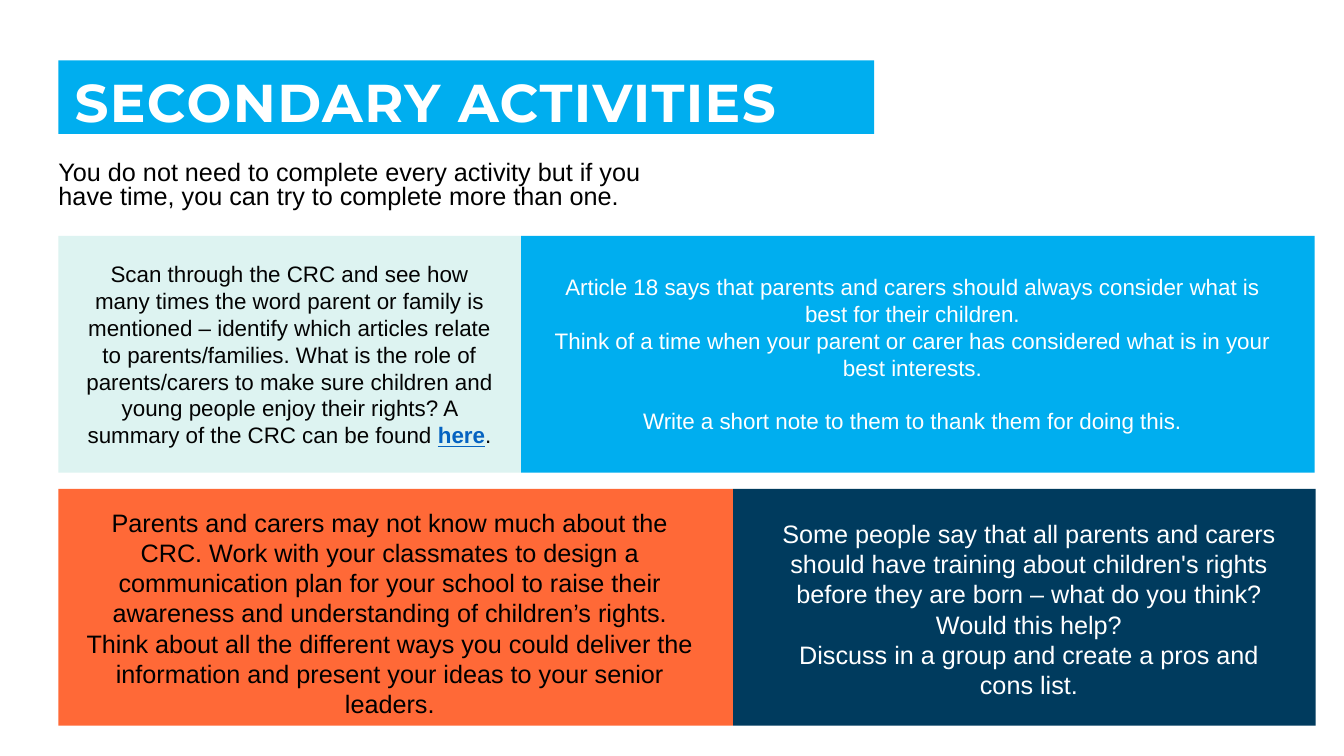
import pptx
import pptx.dml.color
import pptx.enum.shapes
import pptx.enum.text
import pptx.util
from dataclasses import dataclass

Pt = pptx.util.Pt
Inches = pptx.util.Inches
ANCHOR = pptx.enum.text.MSO_ANCHOR
ALIGN = pptx.enum.text.PP_ALIGN


@dataclass(frozen=True)
class Theme:
    sky: str = "00AEEF"
    mint: str = "DDF3F1"
    orange: str = "FF6937"
    navy: str = "003B5E"
    white: str = "FFFFFF"
    black: str = "000000"
    ink: str = "030303"
    link: str = "0563C1"
    heading_font: str = "Montserrat"
    body_font: str = "Arial"
    title: int = 38
    large: int = 18
    small: int = 16


class Deck:
    def __init__(self, theme):
        self.theme = theme
        self.prs = pptx.Presentation()
        self.prs.slide_width = Inches(13.33)
        self.prs.slide_height = Inches(7.5)
        self.s = self.prs.slides.add_slide(self.prs.slide_layouts[6])

    def place(self, left, top, width, height):
        w, h = self.prs.slide_width, self.prs.slide_height
        shares = zip((left, top, width, height), (w, h, w, h))
        return [round(share * side / 100) for share, side in shares]

    def style(self, r, size, color, font=None, bold=False):
        r.font.name = font or self.theme.body_font
        r.font.size = Pt(size)
        r.font.bold = bold
        r.font.color.rgb = pptx.dml.color.RGBColor.from_string(color)

    def panel(self, box, color):
        sp = self.s.shapes.add_shape(
            pptx.enum.shapes.MSO_SHAPE.RECTANGLE, *self.place(*box))
        sp.shadow.inherit = False
        sp.fill.solid()
        sp.fill.fore_color.rgb = pptx.dml.color.RGBColor.from_string(color)
        sp.line.fill.background()
        return sp

    def banner(self, box, text):
        tf = self.panel(box, self.theme.sky).text_frame
        tf.margin_left = tf.margin_top = Inches(0.16)
        tf.margin_right, tf.margin_bottom = Inches(0.12), 0
        tf.vertical_anchor = ANCHOR.MIDDLE
        tf.text = text
        p = tf.paragraphs[0]
        p.alignment = ALIGN.LEFT
        p.line_spacing = 0.9
        self.style(p.runs[0], self.theme.title, self.theme.white,
                   self.theme.heading_font, True)
        p.runs[0].font._element.set("spc", "100")

    def text(self, box, lines, size, color):
        tf = self.s.shapes.add_textbox(*self.place(*box)).text_frame
        tf.word_wrap = True
        tf.text = "\n".join(lines)
        for p in tf.paragraphs:
            self.style(p.runs[0], size, color)
        return tf

    def intro(self, box, line):
        tf = self.text(box, [line], self.theme.large, self.theme.black)
        tf.margin_left = 0
        tf.paragraphs[0].line_spacing = 0.8

    def activity(self, box, lines, size, color):
        tf = self.text(box, lines, size, color)
        tf.vertical_anchor = ANCHOR.MIDDLE
        for p in tf.paragraphs:
            p.alignment = ALIGN.CENTER
        return tf


def main():
    t = Theme()
    deck = Deck(t)
    left = 4.35
    top, height, pitch = 31.2, 31.33, 33.47

    deck.banner((left, 8, 60.69, 9.73), "SECONDARY ACTIVITIES")
    deck.intro((left, 20.8, 46.59, 8.27),
               "You do not need to complete every activity but if you have time, "
               "you can try to complete more than one.")

    card_rows = [[(34.43, t.mint), (59.04, t.sky)],
                 [(50.19, t.orange), (43.36, t.navy)]]
    for row, cards in enumerate(card_rows):
        x = left
        for width, color in cards:
            deck.panel((x, top + row * pitch, width, height), color)
            x += width

    scan = deck.activity(
        (5.33, 33.6, 32.41, 26.53),
        ["Scan through the CRC and see how many times the word parent or family "
         "is mentioned – identify which articles relate to parents/families. "
         "What is the role of parents/carers to make sure children and young "
         "people enjoy their rights? A summary of the CRC can be found "],
        t.small, t.ink)
    p = scan.paragraphs[0]
    for word, color, marked in (("here", t.link, True), (".", t.ink, False)):
        r = p.add_run()
        r.text = word
        deck.style(r, t.small, color, bold=marked)
        r.font.underline = marked

    deck.activity(
        (5.33, 66.27, 47.34, 29.6),
        ["Parents and carers may not know much about the CRC. Work with your "
         "classmates to design a communication plan for your school to raise "
         "their awareness and understanding of children’s rights. Think about "
         "all the different ways you could deliver the information and present "
         "your ideas to your senior leaders."],
        t.large, t.black)

    article = deck.activity(
        (39.76, 35.33, 56.26, 22.93),
        ["Article 18 says that parents and carers should always consider what "
         "is best for their children.",
         "Think of a time when your parent or carer has considered what is in "
         "your best interests.",
         "Write a short note to them to thank them for doing this."],
        t.small, t.white)
    article.paragraphs[-1].space_before = Pt(19)

    deck.activity(
        (56.94, 67.73, 39.23, 25.6),
        ["Some people say that all parents and carers should have training "
         "about children's rights before they are born – what do you think? "
         "Would this help?",
         "Discuss in a group and create a pros and cons list."],
        t.large, t.white)

    deck.prs.save("out.pptx")


if __name__ == "__main__":
    main()
